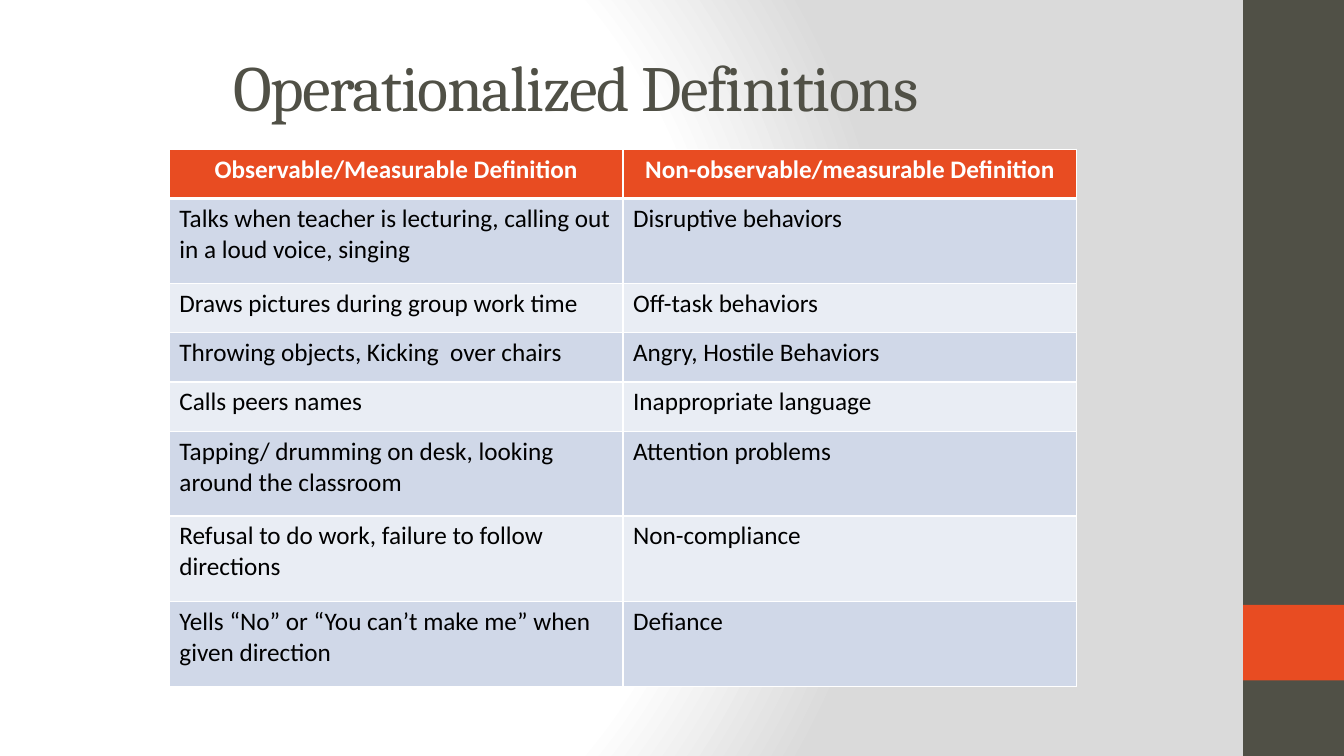
from typing import NamedTuple

from lxml import etree
from pptx import Presentation
from pptx.dml.color import RGBColor
from pptx.enum.shapes import MSO_SHAPE
from pptx.enum.text import MSO_ANCHOR, PP_ALIGN
from pptx.oxml import parse_xml
from pptx.oxml.ns import nsdecls, qn
from pptx.util import Inches, Pt

COLORS = {
    "dark": "505046",
    "accent": "E84C22",
    "white": "FFFFFF",
    "black": "000000",
    "gray": "DADADA",
    "odd_row": "D0D8E8",
    "even_row": "E9EDF4",
}


class SidePanel(NamedTuple):
    top: float
    height: float
    color: str


class Behavior(NamedTuple):
    observable: str
    vague: str
    height: float = 0.49


SIDE_PANELS = [SidePanel(0, 7.5, "dark"), SidePanel(6, 0.75, "accent")]

BEHAVIORS = [
    Behavior("Observable/Measurable Definition", "Non-observable/measurable Definition"),
    Behavior("Talks when teacher is lecturing, calling out in a loud voice, singing",
             "Disruptive behaviors", 0.84),
    Behavior("Draws pictures during group work time", "Off-task behaviors"),
    Behavior("Throwing objects, Kicking  over chairs", "Angry, Hostile Behaviors"),
    Behavior("Calls peers names", "Inappropriate language"),
    Behavior("Tapping/ drumming on desk, looking around the classroom",
             "Attention problems", 0.84),
    Behavior("Refusal to do work, failure to follow directions", "Non-compliance", 0.85),
    Behavior("Yells “No” or “You can’t make me” when given direction", "Defiance", 0.84),
]


def rgb(name: str) -> RGBColor:
    return RGBColor.from_string(COLORS[name])


def set_background(slide) -> None:
    """Radial gradient, white in the middle and gray at the edge."""
    slide.background.fill.gradient()
    gradient = slide.element.find(".//" + qn("a:gradFill"))
    for child in list(gradient):
        gradient.remove(child)
    stops = etree.SubElement(gradient, qn("a:gsLst"))
    for position, color in ((0, "white"), (75, "white"), (100, "gray")):
        stop = etree.SubElement(stops, qn("a:gs"), pos=str(position * 1000))
        etree.SubElement(stop, qn("a:srgbClr"), val=COLORS[color])
    circle = etree.SubElement(gradient, qn("a:path"), path="circle")
    etree.SubElement(circle, qn("a:fillToRect"),
                     l="20000", t="50000", r="100000", b="50000")


def add_side_panel(slide, panel: SidePanel) -> None:
    bar = slide.shapes.add_shape(MSO_SHAPE.RECTANGLE, Inches(12.33), Inches(panel.top),
                                 Inches(1), Inches(panel.height))
    bar.shadow.inherit = False
    bar.fill.solid()
    bar.fill.fore_color.rgb = rgb(panel.color)
    bar.line.fill.background()


def add_title(slide, text: str) -> None:
    frame = slide.shapes.add_textbox(Inches(2.22), Inches(0.23),
                                     Inches(7.54), Inches(1.25)).text_frame
    frame.word_wrap = True
    frame.vertical_anchor = MSO_ANCHOR.MIDDLE
    heading = frame.paragraphs[0]
    run = heading.add_run()
    run.text = text
    heading.font.name = "Cambria"
    heading.font.size = Pt(46)
    heading.font.color.rgb = rgb("dark")
    run.font.size = Pt(46)
    run.font._element.set("spc", "-100")


def set_borders(cell, row: int) -> None:
    """White borders, thick between the header and the first body row."""
    widths = {"L": 1, "R": 1, "T": 3 if row == 1 else 1, "B": 3 if row == 0 else 1}
    properties = cell._tc.get_or_add_tcPr()
    for index, (side, width) in enumerate(widths.items()):
        properties.insert(index, parse_xml(
            f'<a:ln{side} {nsdecls("a")} w="{Pt(width)}"><a:solidFill>'
            f'<a:srgbClr val="{COLORS["white"]}"/></a:solidFill></a:ln{side}>'))


def fill_cell(cell, text: str, row: int) -> None:
    is_header = row == 0
    cell.text = text
    cell.fill.solid()
    cell.fill.fore_color.rgb = rgb(
        "accent" if is_header else "odd_row" if row % 2 else "even_row")
    paragraph = cell.text_frame.paragraphs[0]
    paragraph.alignment = PP_ALIGN.CENTER if is_header else PP_ALIGN.LEFT
    paragraph.font.name = "Calibri"
    paragraph.font.size = Pt(18)
    paragraph.font.bold = is_header
    paragraph.font.color.rgb = rgb("white" if is_header else "black")
    set_borders(cell, row)


def add_definitions(slide, behaviors: list[Behavior]) -> None:
    total_height = sum(behavior.height for behavior in behaviors)
    table = slide.shapes.add_table(len(behaviors), 2, Inches(1.68), Inches(1.48),
                                   Inches(9), Inches(total_height)).table
    for row, behavior in enumerate(behaviors):
        table.rows[row].height = Inches(behavior.height)
        for column, text in enumerate((behavior.observable, behavior.vague)):
            fill_cell(table.cell(row, column), text, row)


def main() -> None:
    presentation = Presentation()
    presentation.slide_width = Inches(13.33)
    presentation.slide_height = Inches(7.5)
    slide = presentation.slides.add_slide(presentation.slide_layouts[6])
    set_background(slide)
    for panel in SIDE_PANELS:
        add_side_panel(slide, panel)
    add_definitions(slide, BEHAVIORS)
    add_title(slide, "Operationalized Definitions")
    presentation.save("out.pptx")


if __name__ == "__main__":
    main()
